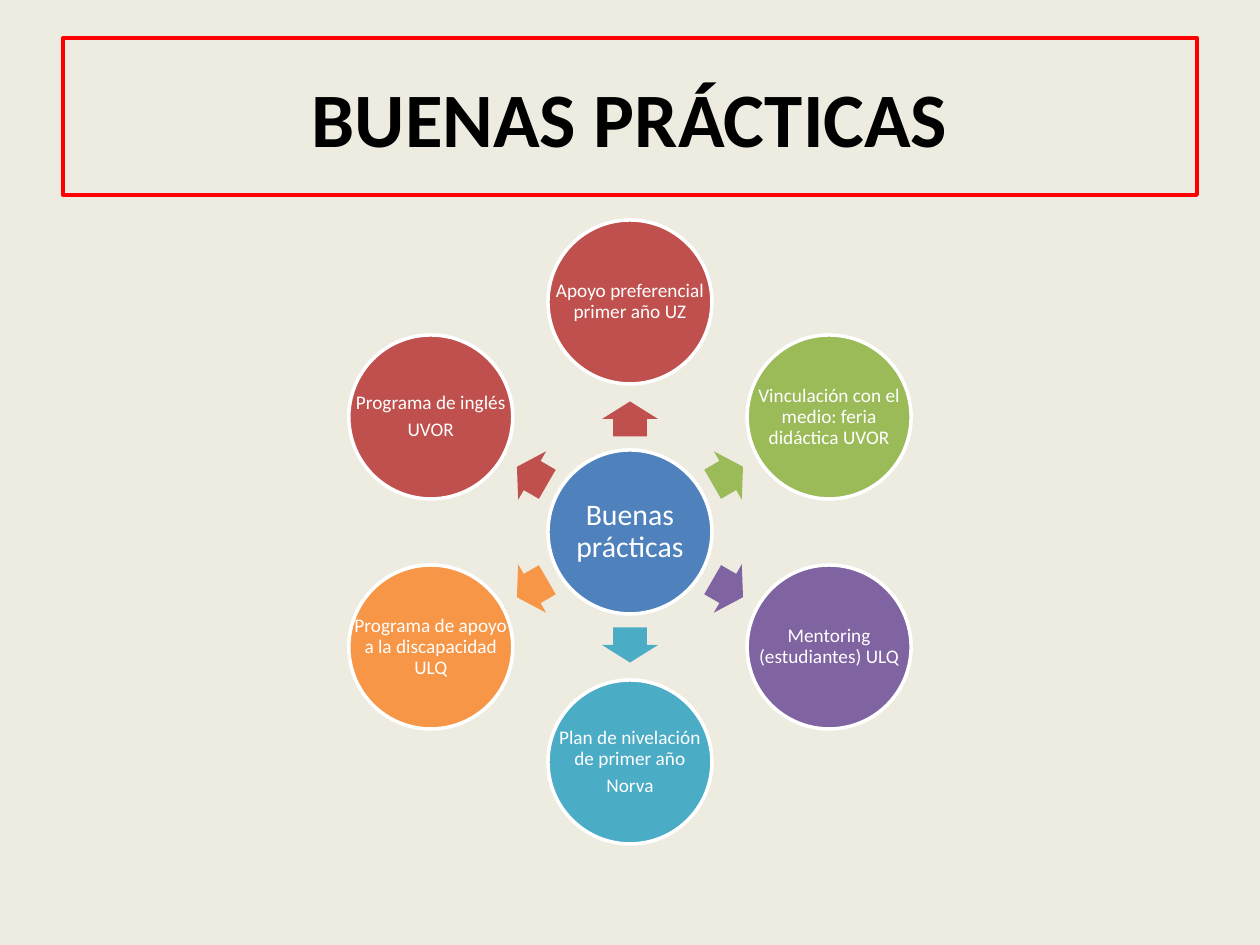
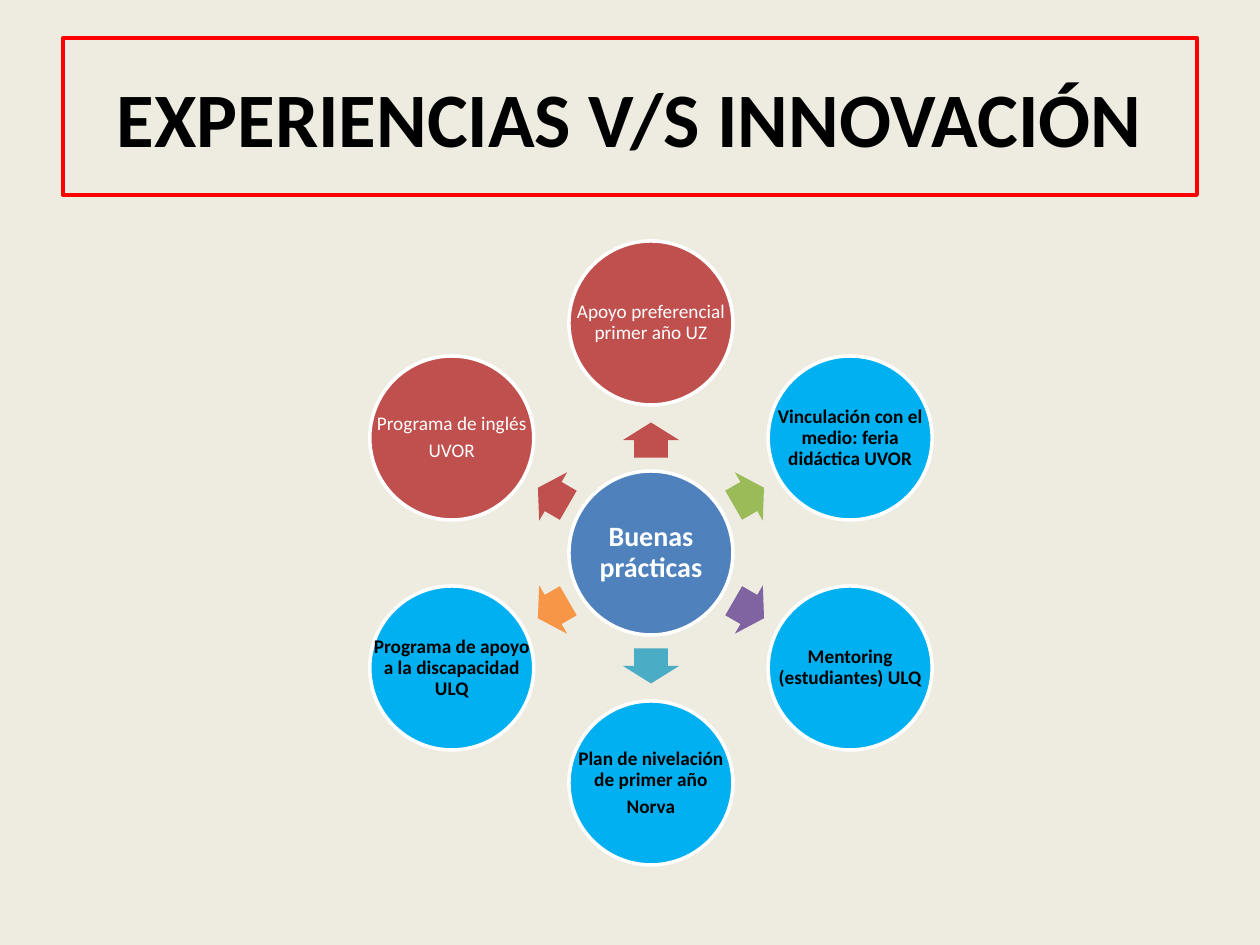
from dataclasses import dataclass
from math import cos, radians, sin

from pptx import Presentation
from pptx import util as u
from pptx.dml.color import RGBColor
from pptx.enum import shapes, text

EMU_PER_PX = u.Inches(1) / 126


@dataclass(frozen=True)
class Theme:
    font: str = "Calibri"
    background: str = "EEECE1"
    title_frame: str = "FF0000"
    dark: str = "000000"
    light: str = "FFFFFF"
    blue: str = "4F81BD"
    red: str = "C0504D"
    green: str = "9BBB59"
    purple: str = "8064A2"
    teal: str = "4BACC6"
    orange: str = "F79646"
    highlight: str = "00B0F0"
    title_size: float = 44
    practice_size: float = 11
    paragraph_gap: float = 3.5
    line_spacing: float = 0.9
    title_line: float = 2.25
    circle_line: float = 2


THEME = Theme()

# Lengths in px
SLIDE_WIDTH, SLIDE_HEIGHT = 1260, 945
TITLE_BOX = (63, 38, 1134, 157)
CIRCLE_SIZE = 164
ORBIT_RADIUS = 230
ARROW_RADIUS = 113
ARROW_LENGTH, ARROW_BREADTH = 35, 56
TEXT_INSET = 2


@dataclass(frozen=True)
class Practice:
    lines: tuple[str, ...]
    color: str
    innovative: bool = False


@dataclass(frozen=True)
class Wheel:
    title: str
    center: tuple[int, int]
    hub_size: float
    hub_bold: bool
    highlights_innovation: bool


@dataclass(frozen=True)
class CircleStyle:
    fill: str
    size: float = THEME.practice_size
    color: str = THEME.light
    bold: bool = False


# Clockwise from the top
PRACTICES = (
    Practice(("Apoyo preferencial primer año UZ",), THEME.red),
    Practice(("Vinculación con el medio: feria didáctica UVOR",), THEME.green, True),
    Practice(("Mentoring (estudiantes) ULQ",), THEME.purple, True),
    Practice(("Plan de nivelación de primer año", "Norva"), THEME.teal, True),
    Practice(("Programa de apoyo a la discapacidad ULQ",), THEME.orange, True),
    Practice(("Programa de inglés", "UVOR"), THEME.red),
)

WHEELS = (
    Wheel("BUENAS PRÁCTICAS", (630, 532), 17, False, False),
    Wheel("EXPERIENCIAS V/S INNOVACIÓN", (651, 553), 16, True, True),
)


def px(length: float) -> u.Emu:
    return u.Emu(round(length * EMU_PER_PX))


def rgb(color: str) -> RGBColor:
    return RGBColor.from_string(color)


def centered_box(center: tuple[float, float], width: int, height: int) -> list[u.Emu]:
    x, y = center
    return [px(length) for length in (x - width / 2, y - height / 2, width, height)]


def orbit_point(center: tuple[int, int], radius: int, angle: float) -> tuple[float, float]:
    x, y = center
    return x + radius * cos(radians(angle)), y + radius * sin(radians(angle))


def format_paragraph(paragraph, size: float, color: str, bold: bool) -> None:
    paragraph.alignment = text.PP_ALIGN.CENTER
    font = paragraph.font
    font.name, font.size, font.bold = THEME.font, u.Pt(size), bold
    font.color.rgb = rgb(color)


def add_title(slide, wording: str) -> None:
    title = slide.shapes.title
    title.left, title.top, title.width, title.height = map(px, TITLE_BOX)
    title.line.color.rgb = rgb(THEME.title_frame)
    title.line.width = u.Pt(THEME.title_line)
    title.text_frame.text = wording
    title.text_frame.vertical_anchor = text.MSO_ANCHOR.MIDDLE
    format_paragraph(title.text_frame.paragraphs[0], THEME.title_size, THEME.dark, True)


def add_circle(group, center: tuple[float, float], lines: tuple[str, ...],
               style: CircleStyle) -> None:
    """Draw a circle and a text box as wide as it, so lines may reach the rim."""
    box = centered_box(center, CIRCLE_SIZE, CIRCLE_SIZE)
    circle = group.shapes.add_shape(shapes.MSO_SHAPE.OVAL, *box)
    circle.shadow.inherit = False
    circle.fill.solid()
    circle.fill.fore_color.rgb = rgb(style.fill)
    circle.line.color.rgb = rgb(THEME.light)
    circle.line.width = u.Pt(THEME.circle_line)

    frame = group.shapes.add_textbox(*box).text_frame
    frame.word_wrap = True
    frame.vertical_anchor = text.MSO_ANCHOR.MIDDLE
    frame.margin_left = frame.margin_right = px(TEXT_INSET)
    frame.margin_top = frame.margin_bottom = px(TEXT_INSET)
    frame.text = "\n".join(lines)
    for paragraph in frame.paragraphs:
        format_paragraph(paragraph, style.size, style.color, style.bold)
        paragraph.line_spacing = THEME.line_spacing
    for paragraph in frame.paragraphs[:-1]:
        paragraph.space_after = u.Pt(THEME.paragraph_gap)


def add_arrow(group, center: tuple[float, float], angle: float, color: str) -> None:
    arrow = group.shapes.add_shape(
        shapes.MSO_SHAPE.RIGHT_ARROW, *centered_box(center, ARROW_LENGTH, ARROW_BREADTH))
    arrow.adjustments[0], arrow.adjustments[1] = 0.6, 0.5
    arrow.rotation = angle % 360
    arrow.shadow.inherit = False
    arrow.fill.solid()
    arrow.fill.fore_color.rgb = rgb(color)
    arrow.line.fill.background()


def add_wheel(slide, wheel: Wheel) -> None:
    group = slide.shapes.add_group_shape()
    hub_style = CircleStyle(THEME.blue, wheel.hub_size, bold=wheel.hub_bold)
    add_circle(group, wheel.center, ("Buenas prácticas",), hub_style)
    for index, practice in enumerate(PRACTICES):
        angle = index * 360 / len(PRACTICES) - 90
        if wheel.highlights_innovation and practice.innovative:
            style = CircleStyle(THEME.highlight, color=THEME.dark, bold=True)
        else:
            style = CircleStyle(practice.color)
        add_arrow(group, orbit_point(wheel.center, ARROW_RADIUS, angle), angle, practice.color)
        add_circle(group, orbit_point(wheel.center, ORBIT_RADIUS, angle), practice.lines, style)


def main() -> None:
    presentation = Presentation()
    presentation.slide_width, presentation.slide_height = px(SLIDE_WIDTH), px(SLIDE_HEIGHT)
    background = presentation.slide_master.background.fill
    background.solid()
    background.fore_color.rgb = rgb(THEME.background)
    title_only = presentation.slide_layouts.get_by_name("Title Only")
    for wheel in WHEELS:
        slide = presentation.slides.add_slide(title_only)
        add_title(slide, wheel.title)
        add_wheel(slide, wheel)
    presentation.save("out.pptx")


if __name__ == "__main__":
    main()
